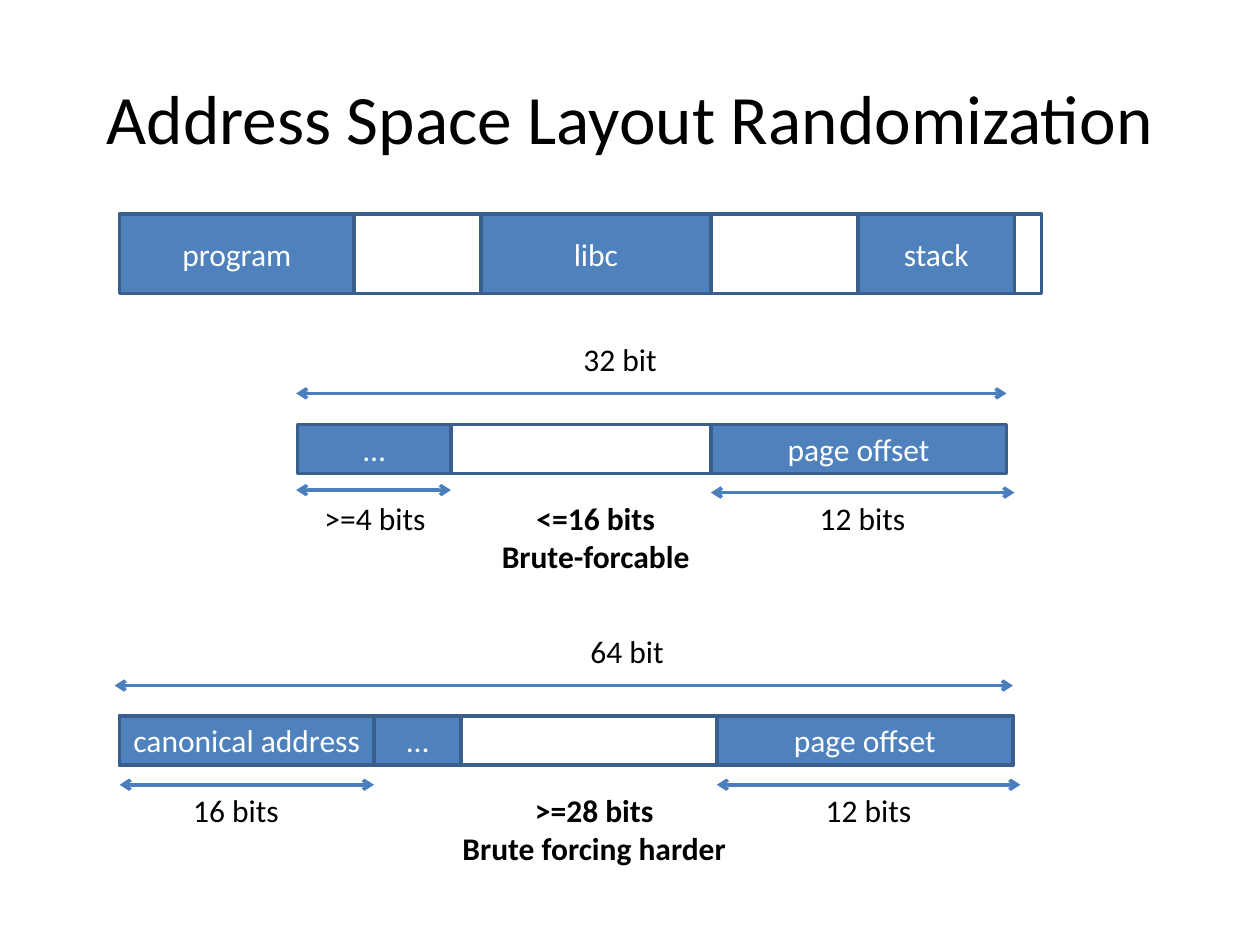
from lxml import etree
from pptx import Presentation
from pptx import util as u
from pptx.dml.color import RGBColor
from pptx.enum import shapes, text
from pptx.oxml import ns

HUES = {"blue": "4F81BD", "edge": "3A5F8C", "arrow": "4B7EBC",
        "white": "FFFFFF", "black": "000000"}
FONT = "Calibri"

# Words: top of the bar, span, cells (left, right, label),
# arrows (left, right, drop), notes (centre, drop, width, lines, bold)
WORDS = [
    (8.56, (6, 20.29),
     [(14.33, 20.29, "page offset"), (6, 9.09, "…")],
     [(5.97, 20.29, -0.63), (14.33, 20.45, 1.37), (5.97, 9.09, 1.32)],
     [(12.5, -1.83, 2, ["32 bit"], False),
      (7.56, 1.37, 2.57, [">=4 bits"], False),
      (17.39, 1.37, 2.26, ["12 bits"], False),
      (12.01, 1.37, 4.32, ["<=16 bits", "Brute-forcable"], True)]),
    (14.43, (2.41, 20.42),
     [(14.45, 20.42, "page offset"), (2.41, 7.54, "canonical address"),
      (7.54, 9.3, "…")],
     [(2.31, 20.42, -0.61), (14.45, 20.57, 1.39), (2.41, 7.54, 1.39)],
     [(12.64, -1.81, 2, ["64 bit"], False),
      (4.76, 1.39, 2.26, ["16 bits"], False),
      (17.51, 1.39, 2.26, ["12 bits"], False),
      (11.98, 1.39, 5.87, [">=28 bits", "Brute forcing harder"], True)]),
]
# Memory: left, right, label, fill
MEMORY = [
    (2.41, 7.14, "program", "blue"), (9.7, 14.33, "libc", "blue"),
    (17.3, 20.45, "stack", "blue"), (7.14, 9.7, "", None),
    (14.33, 21, "", None),
]


def rgb(hue):
    return RGBColor.from_string(HUES[hue])


def put(frame, lines, hue, size=18, bold=False):
    """Write centred lines into a text frame."""
    frame.text = "\n".join(lines)
    style = {"name": FONT, "size": u.Pt(size), "bold": bold}
    for para in frame.paragraphs:
        para.alignment = text.PP_ALIGN.CENTER
        for run in para.runs:
            for key, val in style.items():
                setattr(run.font, key, val)
            run.font.color.rgb = rgb(hue)


def stroke(line, hue):
    line.color.rgb = rgb(hue)
    line.width = u.Pt(2)


def block(slide, left, right, top, high, label="", fill="blue"):
    box = slide.shapes.add_shape(
        shapes.MSO_SHAPE.RECTANGLE,
        u.Cm(left), u.Cm(top), u.Cm(right - left), u.Cm(high))
    box.shadow.inherit = False
    if fill:
        box.fill.solid()
        box.fill.fore_color.rgb = rgb(fill)
    else:
        box.fill.background()
    stroke(box.line, "edge")
    if label:
        frame = box.text_frame
        frame.vertical_anchor = text.MSO_ANCHOR.MIDDLE
        frame.margin_left = frame.margin_right = u.Cm(0.1)
        put(frame, [label], "white")


def arrow(slide, left, right, y):
    """Draw a level line with an open arrowhead at both ends."""
    line = slide.shapes.add_connector(
        shapes.MSO_CONNECTOR.STRAIGHT,
        u.Cm(left), u.Cm(y), u.Cm(right), u.Cm(y))
    stroke(line.line, "arrow")
    ln = line.line._get_or_add_ln()
    for end in ("a:headEnd", "a:tailEnd"):
        etree.SubElement(ln, ns.qn(end), type="arrow")
    etree.SubElement(line._element.spPr, ns.qn("a:effectLst"))


def note(slide, mid, top, wide, lines, bold):
    """Place free text centred on mid."""
    box = slide.shapes.add_textbox(
        u.Cm(mid - wide / 2), u.Cm(top), u.Cm(wide),
        u.Cm(0.24 + 0.78 * len(lines)))
    frame = box.text_frame
    frame.word_wrap = False
    frame.auto_size = text.MSO_AUTO_SIZE.SHAPE_TO_FIT_TEXT
    put(frame, lines, "black", bold=bold)


def title(slide, words):
    box = slide.shapes.add_textbox(
        u.Cm(1.27), u.Cm(0.76), u.Cm(22.86), u.Cm(3.18))
    frame = box.text_frame
    frame.word_wrap = True
    frame.vertical_anchor = text.MSO_ANCHOR.MIDDLE
    put(frame, [words], "black", 39.6)


def word(slide, top, span, cells, spans, notes):
    """Draw one address word with its bit widths."""
    high = 0.99
    block(slide, *span, top, high, fill="white")
    for left, right, label in cells:
        block(slide, left, right, top, high, label)
    for left, right, drop in spans:
        arrow(slide, left, right, top + drop)
    for mid, drop, wide, lines, bold in notes:
        note(slide, mid, top + drop, wide, lines, bold)


def main():
    deck = Presentation()
    deck.slide_width, deck.slide_height = u.Cm(25.4), u.Cm(19.05)
    slide = deck.slides.add_slide(deck.slide_layouts[6])
    title(slide, "Address Space Layout Randomization")
    for left, right, label, fill in MEMORY:
        block(slide, left, right, 4.32, 1.6, label, fill)
    for row in WORDS:
        word(slide, *row)
    deck.save("out.pptx")


if __name__ == "__main__":
    main()
